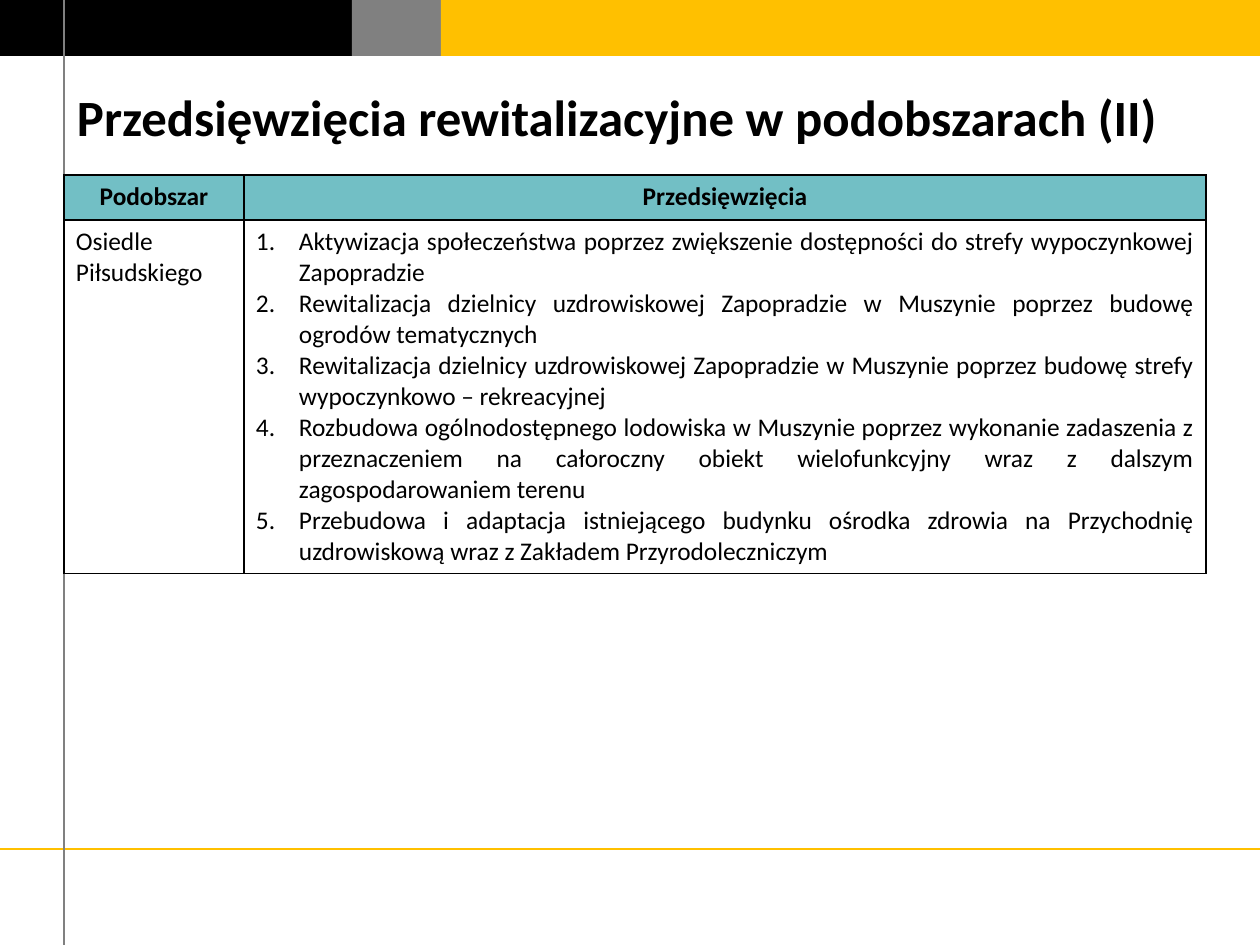
"""Build the slide on revitalisation projects in the Osiedle Piłsudskiego subarea."""
from dataclasses import dataclass

from lxml import etree
from pptx import Presentation
from pptx import util as u
from pptx.dml.color import RGBColor
from pptx.enum import shapes, text
from pptx.oxml import ns


@dataclass(frozen=True)
class Theme:
    font: str = "Calibri"
    title_size: int = 32
    table_size: int = 16
    line_width: float = 0.75
    border_width: int = 1
    black: str = "000000"
    grey: str = "808080"
    gold: str = "FFC000"
    teal: str = "72BFC5"


THEME = Theme()
PX = 8000
WIDTH, HEIGHT = 1260, 945
MARGIN = 64
BAND_HEIGHT = 56
NUMBER_INDENT = 43
ALIGN = text.PP_ALIGN


def px(*lengths):
    return [u.Emu(length * PX) for length in lengths]


def write(para, words, size=THEME.table_size, bold=False, align=ALIGN.LEFT, numbered=False):
    para.alignment = align
    if numbered:
        properties = para._p.get_or_add_pPr()
        properties.set("marL", str(NUMBER_INDENT * PX))
        properties.set("indent", str(-NUMBER_INDENT * PX))
        etree.SubElement(properties, ns.qn("a:buFont"), typeface="+mj-lt")
        etree.SubElement(properties, ns.qn("a:buAutoNum"), type="arabicPeriod")
    span = para.add_run()
    span.text = words
    span.font.name = THEME.font
    span.font.size = u.Pt(size)
    span.font.bold = bold
    span.font.color.rgb = RGBColor.from_string(THEME.black)


deck = Presentation()
deck.slide_width, deck.slide_height = px(WIDTH, HEIGHT)
page = deck.slides.add_slide(deck.slide_layouts[5])

bands = [(0, 352, THEME.black), (352, 441, THEME.grey), (441, WIDTH, THEME.gold)]
for left, right, color in bands:
    band = page.shapes.add_shape(
        shapes.MSO_SHAPE.RECTANGLE, *px(left, 0, right - left, BAND_HEIGHT))
    band.shadow.inherit = False
    band.fill.solid()
    band.fill.fore_color.rgb = RGBColor.from_string(color)
    band.line.fill.background()

guides = [((0, 849, WIDTH, 849), THEME.gold), ((MARGIN, HEIGHT, MARGIN, 0), THEME.grey)]
for ends, color in guides:
    guide = page.shapes.add_connector(shapes.MSO_CONNECTOR.STRAIGHT, *px(*ends))
    guide.line.color.rgb = RGBColor.from_string(color)
    guide.line.width = u.Pt(THEME.line_width)
    etree.SubElement(guide._element.spPr, ns.qn("a:effectLst"))

title = page.shapes.title
title.left, title.top, title.width, title.height = px(MARGIN, BAND_HEIGHT, 1134, 120)
frame = title.text_frame
frame.margin_left, frame.margin_top, frame.margin_right, frame.margin_bottom = px(13, 7, 13, 7)
frame.vertical_anchor = text.MSO_ANCHOR.MIDDLE
frame.auto_size = text.MSO_AUTO_SIZE.NONE
frame.word_wrap = True
write(frame.paragraphs[0], "Przedsięwzięcia rewitalizacyjne w podobszarach (II)",
      size=THEME.title_size, bold=True, align=ALIGN.JUSTIFY)

projects = [
    "Aktywizacja społeczeństwa poprzez zwiększenie dostępności do strefy wypoczynkowej Zapopradzie",
    "Rewitalizacja dzielnicy uzdrowiskowej Zapopradzie w Muszynie poprzez budowę ogrodów tematycznych",
    "Rewitalizacja dzielnicy uzdrowiskowej Zapopradzie w Muszynie poprzez budowę strefy "
    "wypoczynkowo – rekreacyjnej",
    "Rozbudowa ogólnodostępnego lodowiska w Muszynie poprzez wykonanie zadaszenia "
    "z przeznaczeniem na całoroczny obiekt wielofunkcyjny wraz z dalszym zagospodarowaniem terenu",
    "Przebudowa i adaptacja istniejącego budynku ośrodka zdrowia na Przychodnię uzdrowiskową "
    "wraz z Zakładem Przyrodoleczniczym",
]
columns, rows = [180, 962], [45, 353]
table = page.shapes.add_table(
    2, 2, *px(MARGIN, 175, sum(columns), sum(rows))).table
table.first_row = table.horz_banding = False
for column, width in zip(table.columns, px(*columns)):
    column.width = width
for row, height in zip(table.rows, px(*rows)):
    row.height = height

header = dict(bold=True, align=ALIGN.CENTER)
contents = [
    (["Podobszar"], header),
    (["Przedsięwzięcia"], header),
    (["Osiedle Piłsudskiego"], {}),
    (projects, dict(align=ALIGN.JUSTIFY, numbered=True)),
]
for cell, (lines, style) in zip(table.iter_cells(), contents):
    cell.margin_left, cell.margin_top, cell.margin_right, cell.margin_bottom = px(12, 6, 12, 6)
    for number, words in enumerate(lines):
        frame = cell.text_frame
        para = frame.add_paragraph() if number else frame.paragraphs[0]
        write(para, words, **style)
    properties = cell._tc.get_or_add_tcPr()
    for side in ("a:lnL", "a:lnR", "a:lnT", "a:lnB"):
        border = etree.SubElement(properties, ns.qn(side), w=str(u.Pt(THEME.border_width)))
        paint = etree.SubElement(border, ns.qn("a:solidFill"))
        etree.SubElement(paint, ns.qn("a:srgbClr"), val=THEME.black)
    if style is header:
        cell.fill.solid()
        cell.fill.fore_color.rgb = RGBColor.from_string(THEME.teal)
    else:
        cell.fill.background()

deck.save("out.pptx")
